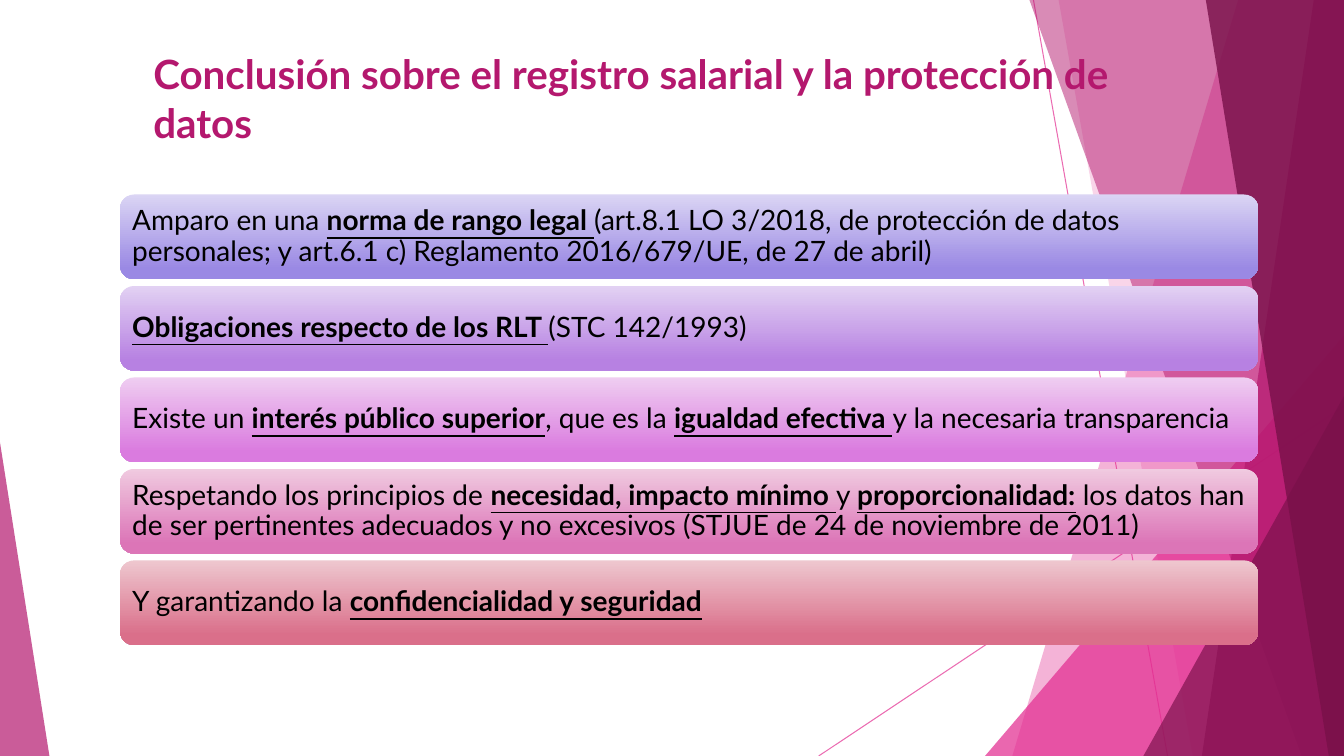
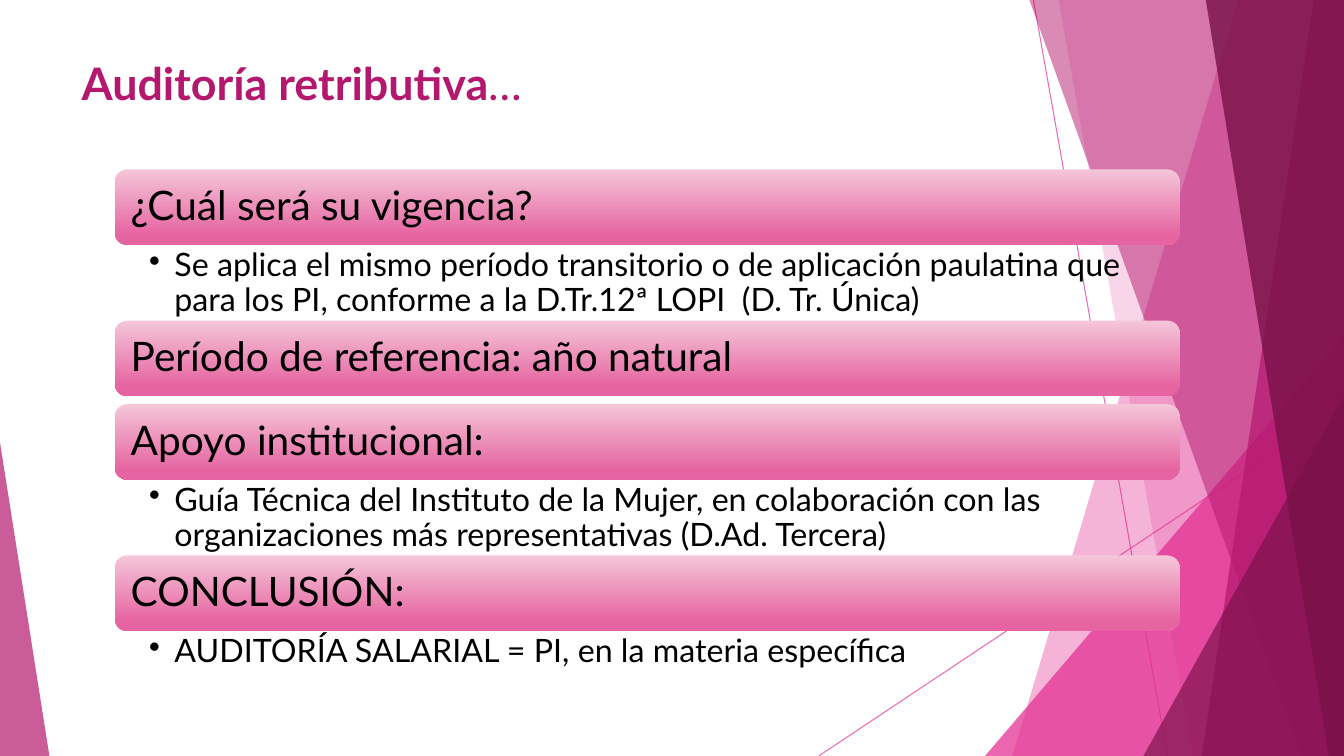
from dataclasses import dataclass
from typing import Any, NamedTuple

from lxml import etree
from pptx import Presentation
from pptx.dml import color as dml
from pptx.enum import shapes as es, text as et
from pptx.oxml import ns
from pptx.util import Inches, Pt


@dataclass(frozen=True)
class Theme:
    font: str = "Lato"
    ink: str = "000000"
    pink: str = "E32D91"
    rose: str = "B4186E"
    wine: str = "781049"
    hair: float = 0.75
    stop: float = 0.88
    lead: float = 0.9
    small: float = 20
    note: float = 23
    large: float = 29


class Box(NamedTuple):
    left: float
    top: float
    width: float
    height: float


class Ray(NamedTuple):
    start: tuple[float, float]
    end: tuple[float, float]


class Band(NamedTuple):
    head: float
    foot: float
    color: str
    alpha: int


class Peak(NamedTuple):
    box: Box
    tip: float
    color: str
    alpha: int


class Bar(NamedTuple):
    text: str
    light: str
    dark: str


class Topic(NamedTuple):
    text: str
    note: str = ""
    depth: float = 0.08


THEME = Theme()
WIDE, HIGH = 13.33, 7.5

DECOR = [
    Ray((10.25, 0), (11.58, HIGH)),
    Ray((WIDE, 4.03), (8.12, HIGH)),
    Band(12.28, 10.04, THEME.pink, 36),
    Band(10.5, 11.83, THEME.pink, 20),
    Peak(Box(9.77, 3.33, 3.56, 4.17), 1, THEME.pink, 72),
    Band(10.21, 12.91, THEME.rose, 50),
    Band(13.03, 11.92, THEME.rose, 70),
    Band(11.96, 13.18, THEME.wine, 80),
    Peak(Box(11.34, 3.93, 1.99, 3.57), 1, THEME.wine, 66),
    Peak(Box(0, 4.39, 0.49, 3.11), 0, THEME.rose, 70),
]

BARS = [
    Bar("Amparo en una *norma de rango legal *(art.8.1 LO 3/2018, de protección de datos "
        "personales; y art.6.1 c) Reglamento 2016/679/UE, de 27 de abril)", "DBD5F4", "9A89E4"),
    Bar("*Obligaciones respecto de los RLT *(STC 142/1993)", "E2D1F3", "B781E2"),
    Bar("Existe un *interés público superior*, que es la *igualdad efectiva *"
        "y la necesaria transparencia", "EFCDF1", "DA7BDF"),
    Bar("Respetando los principios de *necesidad, impacto mínimo *y *proporcionalidad:* "
        "los datos han de ser pertinentes adecuados y no excesivos "
        "(STJUE de 24 de noviembre de 2011)", "F0CAE0", "DC75B7"),
    Bar("Y garantizando la *confidencialidad y seguridad*", "EEC7CF", "DA6F8A"),
]

TOPICS = [
    Topic("¿Cuál será su vigencia?",
          "Se aplica el mismo período transitorio o de aplicación paulatina que para los PI, "
          "conforme a la D.Tr.12ª LOPI  (D. Tr. Única)", 0.75),
    Topic("Período de referencia: año natural"),
    Topic("Apoyo institucional:",
          "Guía Técnica del Instituto de la Mujer, en colaboración con las organizaciones "
          "más representativas (D.Ad. Tercera)", 0.75),
    Topic("CONCLUSIÓN:", "AUDITORÍA SALARIAL = PI, en la materia específica", 0.53),
]


def rgb(code: str) -> dml.RGBColor:
    return dml.RGBColor.from_string(code)


def fade(shape: Any, alpha: int) -> None:
    for node in shape.element.iter(ns.qn("a:srgbClr")):
        etree.SubElement(node, ns.qn("a:alpha"), val=str(alpha * 1000))


def write(shape: Any, text: str, *, size: float, color: str = THEME.ink, under: bool = False,
          lead: float = 1, inset: tuple[float, float, float, float] = (0.1, 0.05, 0.1, 0.05),
          anchor: Any = et.MSO_ANCHOR.TOP, bullet: bool = False) -> None:
    frame = shape.text_frame
    frame.word_wrap = True
    frame.auto_size = et.MSO_AUTO_SIZE.NONE
    frame.vertical_anchor = anchor
    (frame.margin_left, frame.margin_top,
     frame.margin_right, frame.margin_bottom) = map(Inches, inset)
    para = frame.paragraphs[0]
    para.alignment = et.PP_ALIGN.LEFT
    para.line_spacing = lead
    for index, part in enumerate(text.split("*")):
        if not part:
            continue
        run = para.add_run()
        run.text = part
        font = run.font
        font.name, font.size = THEME.font, Pt(size)
        font.color.rgb = rgb(color)
        font.bold = index % 2 == 1
        font.underline = under and font.bold
    if bullet:
        props = para._p.get_or_add_pPr()
        props.set("marL", str(Inches(0.25)))
        props.set("indent", str(Inches(-0.25)))
        etree.SubElement(props, ns.qn("a:buChar"), char="•")


def tint(shape: Any, color: str, alpha: int) -> Any:
    shape.shadow.inherit = False
    shape.fill.solid()
    shape.fill.fore_color.rgb = rgb(color)
    shape.line.fill.background()
    fade(shape, alpha)
    return shape


def draw(slide: Any, item: Ray | Band | Peak) -> Any:
    if isinstance(item, Ray):
        line = slide.shapes.add_connector(
            es.MSO_CONNECTOR.STRAIGHT, *map(Inches, item.start + item.end))
        line.line.color.rgb = rgb(THEME.pink)
        line.line.width = Pt(THEME.hair)
        fade(line, 70)
        etree.SubElement(line.element.spPr, ns.qn("a:effectLst"))
        return line
    if isinstance(item, Band):
        path = slide.shapes.build_freeform(Inches(item.head), 0)
        path.add_line_segments([(Inches(x), Inches(y)) for x, y in
                                ((WIDE, 0), (WIDE, HIGH), (item.foot, HIGH))])
        shape = path.convert_to_shape()
    else:
        shape = slide.shapes.add_shape(
            es.MSO_SHAPE.ISOSCELES_TRIANGLE, *map(Inches, item.box))
        shape.adjustments[0] = item.tip
    return tint(shape, item.color, item.alpha)


def adorn(slide: Any) -> None:
    tree = slide.slide_layout.shapes.element
    for index, item in enumerate(DECOR):
        node = draw(slide, item).element
        next(node.iter(ns.qn("p:cNvPr"))).set("id", str(100 + index))
        tree.insert(2 + index, node)


def head(slide: Any, text: str, box: Box, size: float) -> None:
    title = slide.shapes.title
    title.left, title.top, title.width, title.height = map(Inches, box)
    write(title, text, size=size, color=THEME.rose)


def panel(slide: Any, bar: Bar, box: Box, size: float, pad: float) -> None:
    shape = slide.shapes.add_shape(es.MSO_SHAPE.ROUNDED_RECTANGLE, *map(Inches, box))
    shape.shadow.inherit = False
    shape.line.fill.background()
    shape.fill.gradient()
    shape.fill.gradient_angle = 270
    for stop, color, place in zip(shape.fill.gradient_stops,
                                  (bar.light, bar.dark), (0, THEME.stop)):
        stop.color.rgb = rgb(color)
        stop.position = place
    write(shape, bar.text, size=size, under=True, lead=THEME.lead,
          inset=(pad,) * 4, anchor=et.MSO_ANCHOR.MIDDLE)


def privacy(slide: Any) -> None:
    head(slide, "*Conclusión sobre el registro salarial y la protección de datos*",
         Box(1.42, 0.44, 10.5, 1.06), 28.8)
    top, last, tall = 1.93, 5.56, 0.84
    step = (last - top) / (len(BARS) - 1)
    for index, bar in enumerate(BARS):
        panel(slide, bar, Box(1.19, top + index * step, 11.29, tall), THEME.small, 0.08)


def audit(slide: Any) -> None:
    head(slide, "*Auditoría retributiva*…", Box(0.71, 0.5, 10.29, 0.82), 32)
    left, top, width, tall = 1.14, 1.68, 10.56, 0.75
    for topic in TOPICS:
        panel(slide, Bar(topic.text, "F4C6D8", "E664A1"),
              Box(left, top, width, tall), THEME.large, 0.12)
        top += tall
        if topic.note:
            note = slide.shapes.add_textbox(*map(Inches, (left, top, width, topic.depth)))
            write(note, topic.note, size=THEME.note, lead=THEME.lead,
                  inset=(0.34, 0.04, 0.23, 0.04), bullet=True)
        top += topic.depth


def main() -> None:
    deck = Presentation()
    deck.slide_width, deck.slide_height = Inches(WIDE), Inches(HIGH)
    layout = deck.slide_layouts.get_by_name("Title Only")
    first, second = (deck.slides.add_slide(layout) for _ in range(2))
    adorn(first)
    privacy(first)
    audit(second)
    deck.save("out.pptx")


if __name__ == "__main__":
    main()
